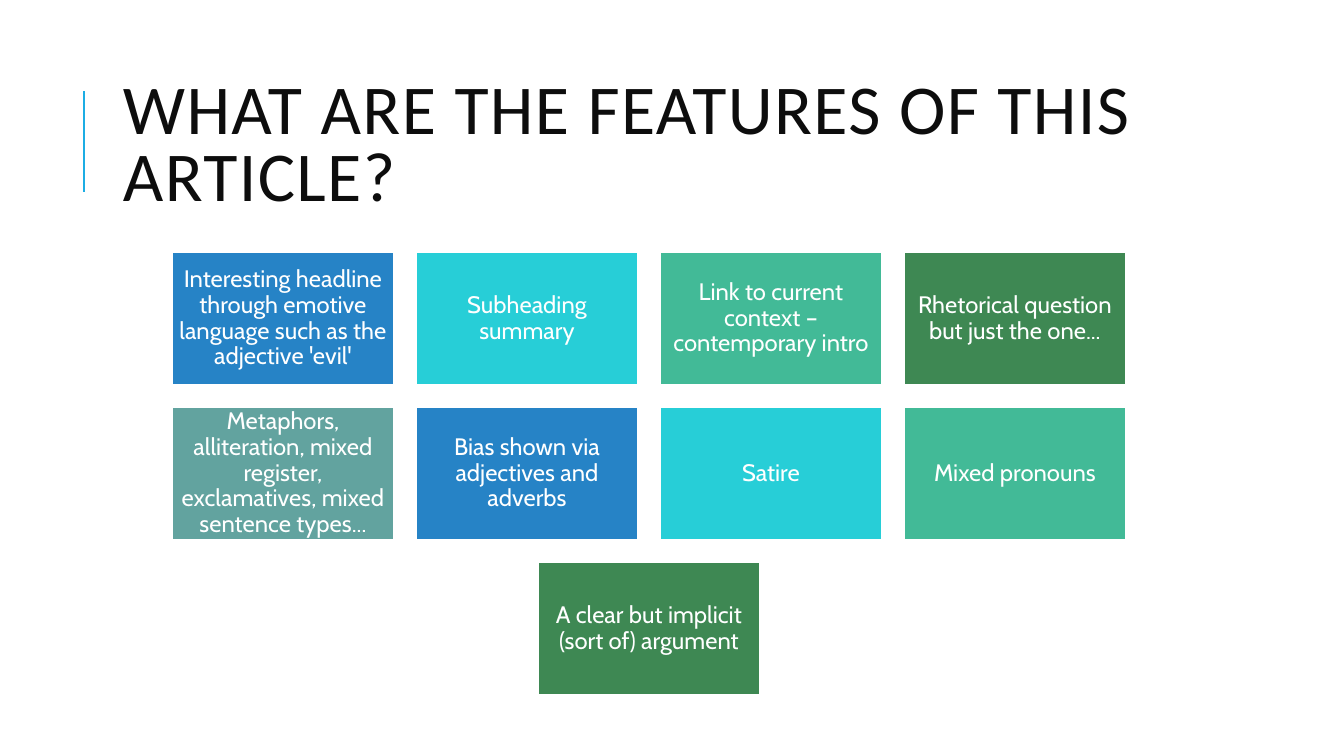
from dataclasses import dataclass

from lxml.etree import SubElement
from pptx import Presentation
from pptx.dml.color import RGBColor
from pptx.enum.shapes import MSO_CONNECTOR as Connector, MSO_SHAPE as Shape
from pptx.enum.text import MSO_ANCHOR as Anchor, PP_ALIGN as Align
from pptx.oxml.ns import qn
from pptx.util import Pt

EMU_PER_PIXEL = 914400 / 100.8


def px(pixels):
    return round(pixels * EMU_PER_PIXEL)


@dataclass(frozen=True)
class Theme:
    white: str = "FFFFFF"
    ink: str = "0D0D0D"
    accent: str = "1CADE4"
    cards: tuple = ("2683C6", "27CED7", "42BA97", "3E8853", "62A39F")
    title_font: str = "Calibri"
    card_font: str = "Cabin"
    title_size: int = 50
    card_size: int = 17
    accent_width: float = 1.5
    card_border: float = 1.25


def write_text(frame, text, *, font, size, color, align, leading, tracking=0):
    frame.word_wrap = True
    frame.vertical_anchor = Anchor.MIDDLE
    para = frame.paragraphs[0]
    para.alignment = align
    para.line_spacing = leading
    span = para.add_run()
    span.text = text
    span.font.name = font
    span.font.size = Pt(size)
    span.font.color.rgb = RGBColor.from_string(color)
    if tracking:
        span._r.get_or_add_rPr().set("spc", str(tracking * 100))


class SlideBuilder:
    def __init__(self, page, theme):
        self.page = page
        self.theme = theme

    def background(self):
        fill = self.page.background.fill
        fill.solid()
        fill.fore_color.rgb = RGBColor.from_string(self.theme.white)

    def accent_line(self, x, top, bottom):
        line = self.page.shapes.add_connector(
            Connector.STRAIGHT, px(x), px(bottom), px(x), px(top))
        line.line.color.rgb = RGBColor.from_string(self.theme.accent)
        line.line.width = Pt(self.theme.accent_width)
        SubElement(line._element.spPr, qn("a:effectLst"))

    def title(self, text, left, top, width, height):
        box = self.page.shapes.add_textbox(px(left), px(top), px(width), px(height))
        write_text(box.text_frame, text, font=self.theme.title_font,
                   size=self.theme.title_size, color=self.theme.ink,
                   align=Align.LEFT, leading=0.8, tracking=1)

    def card(self, text, color, left, top, width, height):
        box = self.page.shapes.add_shape(
            Shape.RECTANGLE, px(left), px(top), px(width), px(height))
        box.shadow.inherit = False
        box.fill.solid()
        box.fill.fore_color.rgb = RGBColor.from_string(color)
        box.line.color.rgb = RGBColor.from_string(self.theme.white)
        box.line.width = Pt(self.theme.card_border)
        frame = box.text_frame
        frame.margin_left = frame.margin_right = px(7)
        frame.margin_top = frame.margin_bottom = px(7)
        write_text(frame, text, font=self.theme.card_font,
                   size=self.theme.card_size, color=self.theme.white,
                   align=Align.CENTER, leading=0.9)

    def card_grid(self, texts, columns, center, top, width, height, gap):
        for index, text in enumerate(texts):
            row, column = divmod(index, columns)
            in_row = min(columns, len(texts) - row * columns)
            row_width = in_row * width + (in_row - 1) * gap
            left = center - row_width // 2 + column * (width + gap)
            color = self.theme.cards[index % len(self.theme.cards)]
            self.card(text, color, left, top + row * (height + gap), width, height)


FEATURES = [
    "Interesting headline through emotive language such as the adjective 'evil'",
    "Subheading summary",
    "Link to current context – contemporary intro",
    "Rhetorical question but just the one...",
    "Metaphors, alliteration, mixed register, exclamatives, mixed sentence types...",
    "Bias shown via adjectives and adverbs",
    "Satire",
    "Mixed pronouns",
    "A clear but implicit (sort of) argument",
]

deck = Presentation()
deck.slide_width, deck.slide_height = px(1344), px(756)
builder = SlideBuilder(deck.slides.add_slide(deck.slide_layouts[6]), Theme())
builder.background()
builder.accent_line(84, 91, 192)
builder.title("WHAT ARE THE FEATURES OF THIS ARTICLE?", 113, 65, 1072, 165)
builder.card_grid(FEATURES, columns=4, center=649, top=252,
                  width=222, height=133, gap=22)
deck.save("out.pptx")
